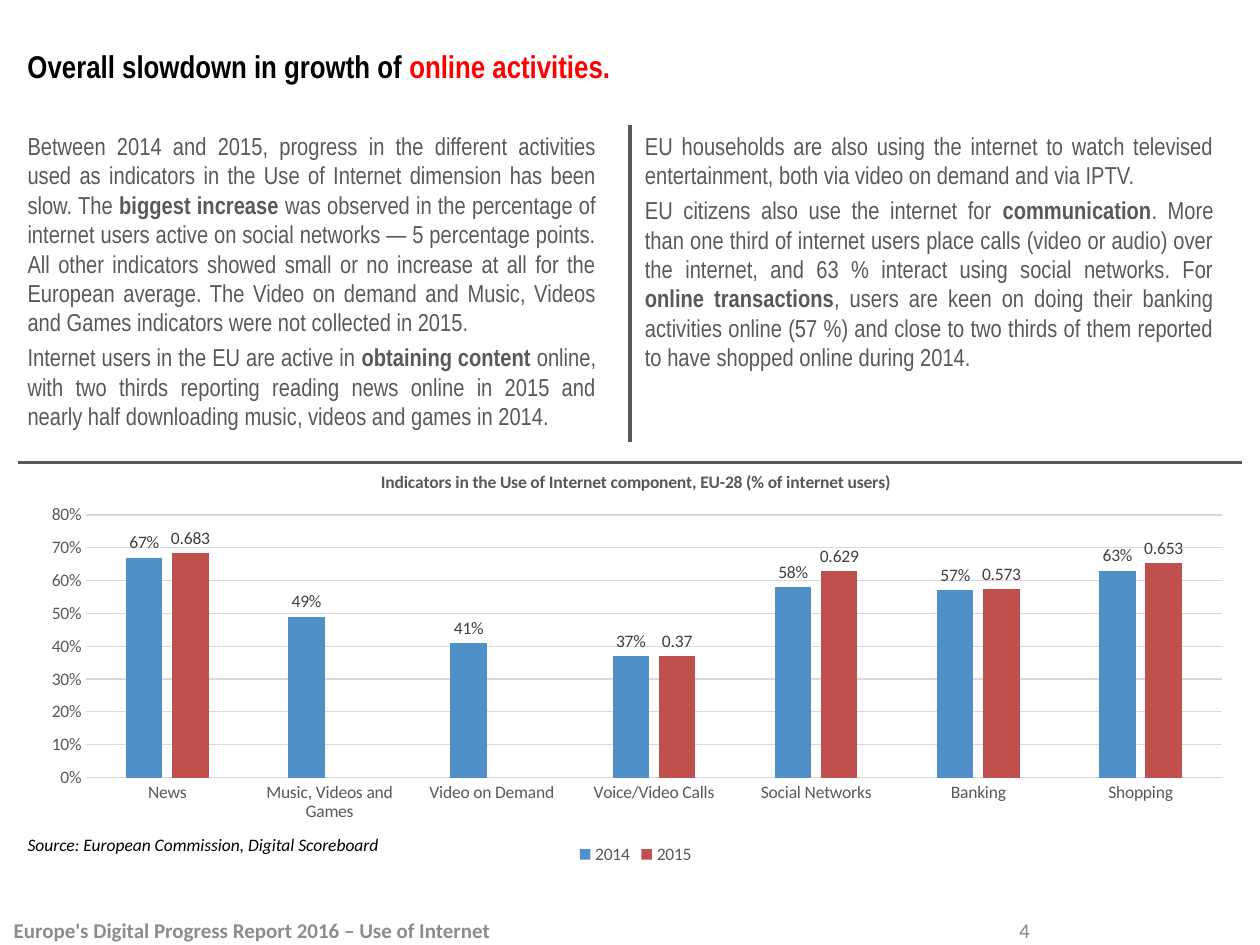
from dataclasses import dataclass

from lxml import etree
from pptx import Presentation
from pptx import util as u
from pptx.chart import data as chart_data
from pptx.dml import color
from pptx.enum import chart as charts
from pptx.enum import shapes, text
from pptx.oxml import ns

BLACK = color.RGBColor(0x00, 0x00, 0x00)
RED = color.RGBColor(0xFF, 0x00, 0x00)
DARK_GREY = color.RGBColor(0x59, 0x59, 0x59)
LABEL_GREY = color.RGBColor(0x40, 0x40, 0x40)
GRID_GREY = color.RGBColor(0xD9, 0xD9, 0xD9)
FOOTER_GREY = color.RGBColor(0x8C, 0x8C, 0x8C)
NUMBER_GREY = color.RGBColor(0x89, 0x89, 0x89)
BLUE = color.RGBColor(0x50, 0x90, 0xC8)
BRICK = color.RGBColor(0xC0, 0x50, 0x4D)

LEFT = 8.64
COLUMN_TOP, COLUMN_WIDTH, COLUMN_HEIGHT = 71.28, 339.12, 181.44
FOOTER_TOP, FOOTER_HEIGHT = 520.56, 21.6


@dataclass(frozen=True)
class Span:
    content: str
    bold: bool = False
    italic: bool = False
    shade: color.RGBColor = DARK_GREY


@dataclass(frozen=True)
class TextBlock:
    left: float
    top: float
    width: float
    height: float
    paragraphs: list[list[Span]]
    size: float
    font: str = "Calibri"
    align: text.PP_ALIGN = text.PP_ALIGN.LEFT
    anchor: text.MSO_ANCHOR = text.MSO_ANCHOR.TOP
    wrap: bool = True


@dataclass(frozen=True)
class Rule:
    x1: float
    y1: float
    x2: float
    y2: float


@dataclass(frozen=True)
class Indicator:
    year: str
    values: list[float | None]
    fill: color.RGBColor
    label_format: str


RULES = [Rule(360, 71.28, 360, 252.72), Rule(10.08, 264.24, 709.92, 264.24)]

PROGRESS = [
    [
        Span("Between 2014 and 2015, progress in the different activities used as indicators in the "
             "Use of Internet dimension has been slow. The "),
        Span("biggest increase ", bold=True),
        Span("was observed in the percentage of internet users active on social networks — "
             "5 percentage points. All other indicators showed small or no increase at all for the "
             "European average. The Video on demand and Music, Videos and Games indicators were "
             "not collected in 2015. "),
    ],
    [
        Span("Internet users in the EU are active in "),
        Span("obtaining content", bold=True),
        Span(" online, with two thirds reporting reading news online in 2015 and nearly half "
             "downloading music, videos and games in 2014."),
    ],
]
HOUSEHOLDS = [
    [Span("EU households are also using the internet to watch televised entertainment, both via "
          "video on demand and via IPTV.")],
    [
        Span("EU citizens also use the internet for "),
        Span("communication", bold=True),
        Span(". More than one third of internet users place calls (video or audio) over the "
             "internet, and 63 % interact using social networks. For "),
        Span("online transactions", bold=True),
        Span(", users are keen on doing their banking activities online (57 %) and close to two "
             "thirds of them reported to have shopped online during 2014."),
    ],
]
HEADLINE = [[Span("Overall slowdown in growth of ", bold=True, shade=BLACK),
             Span("online activities.", bold=True, shade=RED)]]
SOURCE = [[Span("Source: European Commission, Digital Scoreboard", italic=True, shade=BLACK)]]
FOOTER = [[Span("Europe's Digital Progress Report 2016 – Use of Internet", bold=True,
                shade=FOOTER_GREY)]]
PAGE_NUMBER = [[Span("4", shade=NUMBER_GREY)]]

BLOCKS = [
    TextBlock(LEFT, LEFT, 702.72, 57.6, HEADLINE, 18, "Arial Narrow",
              anchor=text.MSO_ANCHOR.MIDDLE),
    *[TextBlock(left, COLUMN_TOP, COLUMN_WIDTH, COLUMN_HEIGHT, paragraphs, 14, "Arial Narrow",
                text.PP_ALIGN.JUSTIFY)
      for left, paragraphs in ((LEFT, PROGRESS), (361.44, HOUSEHOLDS))],
    TextBlock(LEFT, 473.04, 217.44, 19.44, SOURCE, 10, wrap=False),
    TextBlock(0.72, FOOTER_TOP, 448.56, FOOTER_HEIGHT, FOOTER, 12,
              anchor=text.MSO_ANCHOR.MIDDLE),
    TextBlock(563.76, FOOTER_TOP, 43.2, FOOTER_HEIGHT, PAGE_NUMBER, 12,
              align=text.PP_ALIGN.CENTER, anchor=text.MSO_ANCHOR.MIDDLE),
]

CHART_TITLE = "Indicators in the Use of Internet component, EU-28 (% of internet users)"
CATEGORIES = ["News", "Music, Videos and Games", "Video on Demand", "Voice/Video Calls",
              "Social Networks", "Banking", "Shopping"]
INDICATORS = [
    Indicator("2014", [0.67, 0.49, 0.41, 0.37, 0.58, 0.57, 0.63], BLUE, "0%"),
    Indicator("2015", [0.683, None, None, 0.37, 0.629, 0.573, 0.653], BRICK, "General"),
]
PLOT_LAYOUT = {"layoutTarget": "inner", "xMode": "edge", "yMode": "edge",
               "x": "0.05", "y": "0.15", "w": "0.93", "h": "0.63"}


def style_font(font, size: float, name: str, shade: color.RGBColor, bold: bool = False) -> None:
    font.size = u.Pt(size)
    font.name = name
    font.bold = bold
    font.color.rgb = shade


def draw_rule(slide, rule: Rule) -> None:
    connector = slide.shapes.add_connector(
        shapes.MSO_CONNECTOR.STRAIGHT,
        u.Pt(rule.x1), u.Pt(rule.y1), u.Pt(rule.x2), u.Pt(rule.y2))
    connector.line.color.rgb = DARK_GREY
    connector.line.width = u.Pt(2)
    etree.SubElement(connector._element.spPr, ns.qn("a:effectLst"))


def draw_text(slide, block: TextBlock) -> None:
    shape = slide.shapes.add_textbox(
        u.Pt(block.left), u.Pt(block.top), u.Pt(block.width), u.Pt(block.height))
    frame = shape.text_frame
    frame.word_wrap = block.wrap
    frame.vertical_anchor = block.anchor
    for index, spans in enumerate(block.paragraphs):
        paragraph = frame.add_paragraph() if index else frame.paragraphs[0]
        paragraph.alignment = block.align
        if index:
            paragraph.space_before = u.Pt(3.1)
        for span in spans:
            run = paragraph.add_run()
            run.text = span.content
            style_font(run.font, block.size, block.font, span.shade, span.bold)
            run.font.italic = span.italic


def place_plot(chart) -> None:
    plot_area = chart._chartSpace.chart.plotArea
    for old_layout in plot_area.findall(ns.qn("c:layout")):
        plot_area.remove(old_layout)
    layout = etree.Element(ns.qn("c:layout"))
    manual = etree.SubElement(layout, ns.qn("c:manualLayout"))
    for tag, value in PLOT_LAYOUT.items():
        etree.SubElement(manual, ns.qn(f"c:{tag}")).set("val", value)
    plot_area.insert(0, layout)


def draw_chart(slide) -> None:
    data = chart_data.CategoryChartData()
    data.categories = CATEGORIES
    for indicator in INDICATORS:
        data.add_series(indicator.year, indicator.values, indicator.label_format)
    chart = slide.shapes.add_chart(
        charts.XL_CHART_TYPE.COLUMN_CLUSTERED,
        u.Pt(14.4), u.Pt(258.48), u.Pt(697.68), u.Pt(238.32), data).chart
    style_font(chart.font, 10, "Calibri", DARK_GREY)

    chart.has_title = True
    chart.chart_title.include_in_layout = False
    title = chart.chart_title.text_frame
    title.text = CHART_TITLE
    style_font(title.paragraphs[0].runs[0].font, 10, "Calibri", DARK_GREY, True)

    chart.has_legend = True
    chart.legend.position = charts.XL_LEGEND_POSITION.BOTTOM
    chart.legend.include_in_layout = False
    style_font(chart.legend.font, 10, "Calibri", DARK_GREY)

    for axis in (chart.category_axis, chart.value_axis):
        axis.major_tick_mark = axis.minor_tick_mark = charts.XL_TICK_MARK.NONE
        style_font(axis.tick_labels.font, 10, "Calibri", DARK_GREY)
    values = chart.value_axis
    values.minimum_scale, values.maximum_scale, values.major_unit = 0, 0.8, 0.1
    values.tick_labels.number_format = "0%"
    values.tick_labels.number_format_is_linked = False
    values.format.line.fill.background()
    for line in (chart.category_axis.format.line, values.major_gridlines.format.line):
        line.color.rgb = GRID_GREY
        line.width = u.Pt(0.75)

    plot = chart.plots[0]
    plot.vary_by_categories = False
    plot.gap_width, plot.overlap = 219, -27
    for series, indicator in zip(plot.series, INDICATORS):
        series.format.fill.solid()
        series.format.fill.fore_color.rgb = indicator.fill
        labels = series.data_labels
        labels.show_value = True
        labels.position = charts.XL_LABEL_POSITION.OUTSIDE_END
        labels.number_format = indicator.label_format
        labels.number_format_is_linked = False
        style_font(labels.font, 10, "Calibri", LABEL_GREY)
    place_plot(chart)


def main() -> None:
    presentation = Presentation()
    presentation.slide_width, presentation.slide_height = u.Pt(720), u.Pt(540)
    slide = presentation.slides.add_slide(presentation.slide_layouts[6])
    for rule in RULES:
        draw_rule(slide, rule)
    draw_chart(slide)
    for block in BLOCKS:
        draw_text(slide, block)
    presentation.save("out.pptx")


if __name__ == "__main__":
    main()
